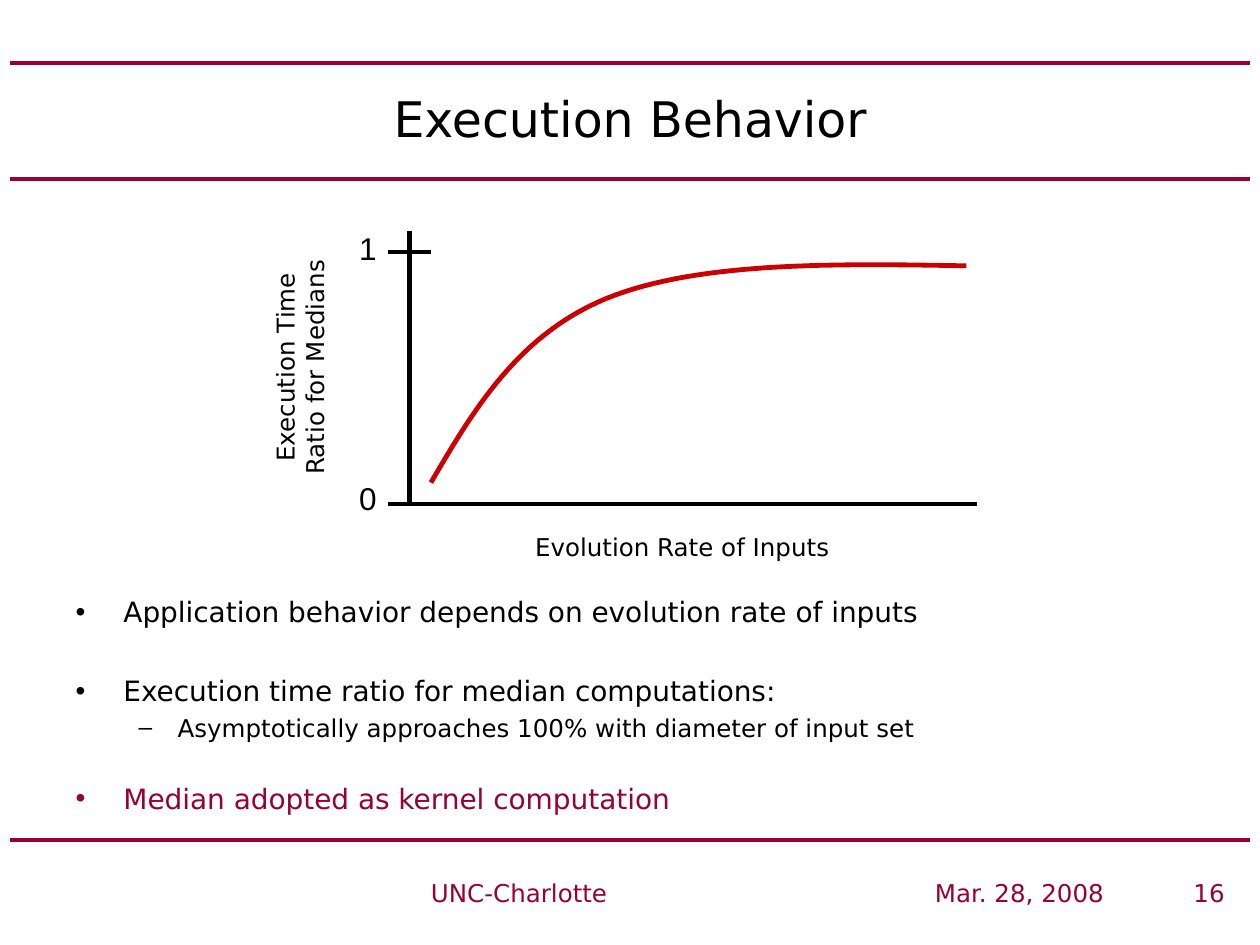
from lxml.etree import SubElement
from pptx import Presentation
from pptx.dml.color import RGBColor
from pptx.enum.shapes import MSO_CONNECTOR
from pptx.enum.text import MSO_ANCHOR, MSO_AUTO_SIZE, PP_ALIGN
from pptx.oxml.ns import qn
from pptx.util import Inches, Pt

COLORS = {"maroon": "990033", "black": "000000", "curve": "CC0000"}
SANS = "DejaVu Sans"


def write(para, text, size=14, font=SANS, color="black", align=PP_ALIGN.LEFT, before=0):
    para.alignment = align
    para.space_before = Pt(before)
    span = para.add_run()
    span.text = text
    span.font.size = Pt(size)
    span.font.name = font
    span.font.color.rgb = RGBColor.from_string(COLORS[color])


def draw_line(page, x1, y1, x2, y2, color, width):
    line = page.shapes.add_connector(
        MSO_CONNECTOR.STRAIGHT, Inches(x1), Inches(y1), Inches(x2), Inches(y2))
    line.line.color.rgb = RGBColor.from_string(COLORS[color])
    line.line.width = Pt(width)
    SubElement(line._element.spPr, qn("a:effectLst"))


deck = Presentation()
deck.slide_width, deck.slide_height = Inches(10), Inches(7.5)
page = deck.slides.add_slide(deck.slide_layouts[1])

# Horizontal rules
for y in (0.5, 1.42, 6.67):
    draw_line(page, 0.08, y, 9.92, y, "maroon", 2.25)

# Title
title = page.shapes.title
title.left, title.top, title.width, title.height = map(Inches, (0.5, 0.5, 9, 0.87))
title.text_frame.auto_size = MSO_AUTO_SIZE.NONE
title.text_frame.vertical_anchor = MSO_ANCHOR.MIDDLE
write(title.text_frame.paragraphs[0], "Execution Behavior", size=28, align=PP_ALIGN.CENTER)

# Axes: vertical, tick at 1, horizontal
for ends in ((3.25, 1.83, 3.25, 4), (3.08, 2, 3.42, 2), (3.08, 4, 7.75, 4)):
    draw_line(page, *ends, "black", 2.75)

# Axis labels
labels = [
    ("Evolution Rate of Inputs", (3.83, 4.17, 3.17, 0.33), 0, 14, SANS),
    ("Execution Time Ratio for Medians", (1.38, 2.63, 2, 0.57), 270, 14, SANS),
    ("1", (2.67, 1.77, 0.5, 0.4), 0, 18, "Arial"),
    ("0", (2.67, 3.75, 0.5, 0.4), 0, 18, "Arial"),
]
for text, place, rotation, size, font in labels:
    box = page.shapes.add_textbox(*map(Inches, place))
    box.rotation = rotation
    box.text_frame.word_wrap = True
    write(box.text_frame.paragraphs[0], text, size=size, font=font, align=PP_ALIGN.CENTER)

# Curve: two cubic Bezier segments, sampled evenly
segments = [
    ((3.42, 3.83), (3.76, 3.25), (4.11, 2.66), (4.81, 2.37)),
    ((4.81, 2.37), (5.52, 2.08), (6.59, 2.09), (7.67, 2.11)),
]
STEPS = 30
points = []
for segment in segments:
    for step in range(1, STEPS + 1):
        t = step / STEPS
        weights = ((1 - t) ** 3, 3 * t * (1 - t) ** 2, 3 * t ** 2 * (1 - t), t ** 3)
        points.append(tuple(
            Inches(sum(w * point[axis] for w, point in zip(weights, segment)))
            for axis in (0, 1)))
start_x, start_y = map(Inches, segments[0][0])
builder = page.shapes.build_freeform(start_x, start_y)
builder.add_line_segments(points, close=False)
curve = builder.convert_to_shape()
curve.shadow.inherit = False
curve.fill.background()
curve.line.color.rgb = RGBColor.from_string(COLORS["curve"])
curve.line.width = Pt(2.75)

# Bullet list: text, level, size, color, space before
bullets = [
    ("Application behavior depends on evolution rate of inputs", 0, 16, "black", 0),
    ("Execution time ratio for median computations:", 0, 16, "black", 26),
    ("Asymptotically approaches 100% with diameter of input set", 1, 14, "black", 3),
    ("Median adopted as kernel computation", 0, 16, "maroon", 22.5),
]
level_styles = [("•", 0.38, -0.38), ("–", 0.81, -0.31)]
body = page.placeholders[1]
body.left, body.top, body.width, body.height = map(Inches, (0.5, 4.67, 9, 1.92))
frame = body.text_frame
frame.auto_size = MSO_AUTO_SIZE.NONE
for index, (text, level, size, color, before) in enumerate(bullets):
    para = frame.add_paragraph() if index else frame.paragraphs[0]
    para.level = level
    mark, margin, indent = level_styles[level]
    props = para._p.get_or_add_pPr()
    props.set("marL", str(Inches(margin)))
    props.set("indent", str(Inches(indent)))
    SubElement(props, qn("a:buChar"), char=mark)
    write(para, text, size=size, color=color, before=before)

# Footer: place, date and page number on tab stops
footer = page.shapes.add_textbox(Inches(2.83), Inches(6.92), Inches(7), Inches(0.33))
footer.text_frame.word_wrap = True
footer.text_frame.margin_left = Inches(0.59)
para = footer.text_frame.paragraphs[0]
tabs = SubElement(para._p.get_or_add_pPr(), qn("a:tabLst"))
for position, side in ((4, "l"), (6.3, "r")):
    SubElement(tabs, qn("a:tab"), pos=str(Inches(position)), algn=side)
write(para, "UNC-Charlotte\tMar. 28, 2008\t16", color="maroon")

deck.save("out.pptx")
